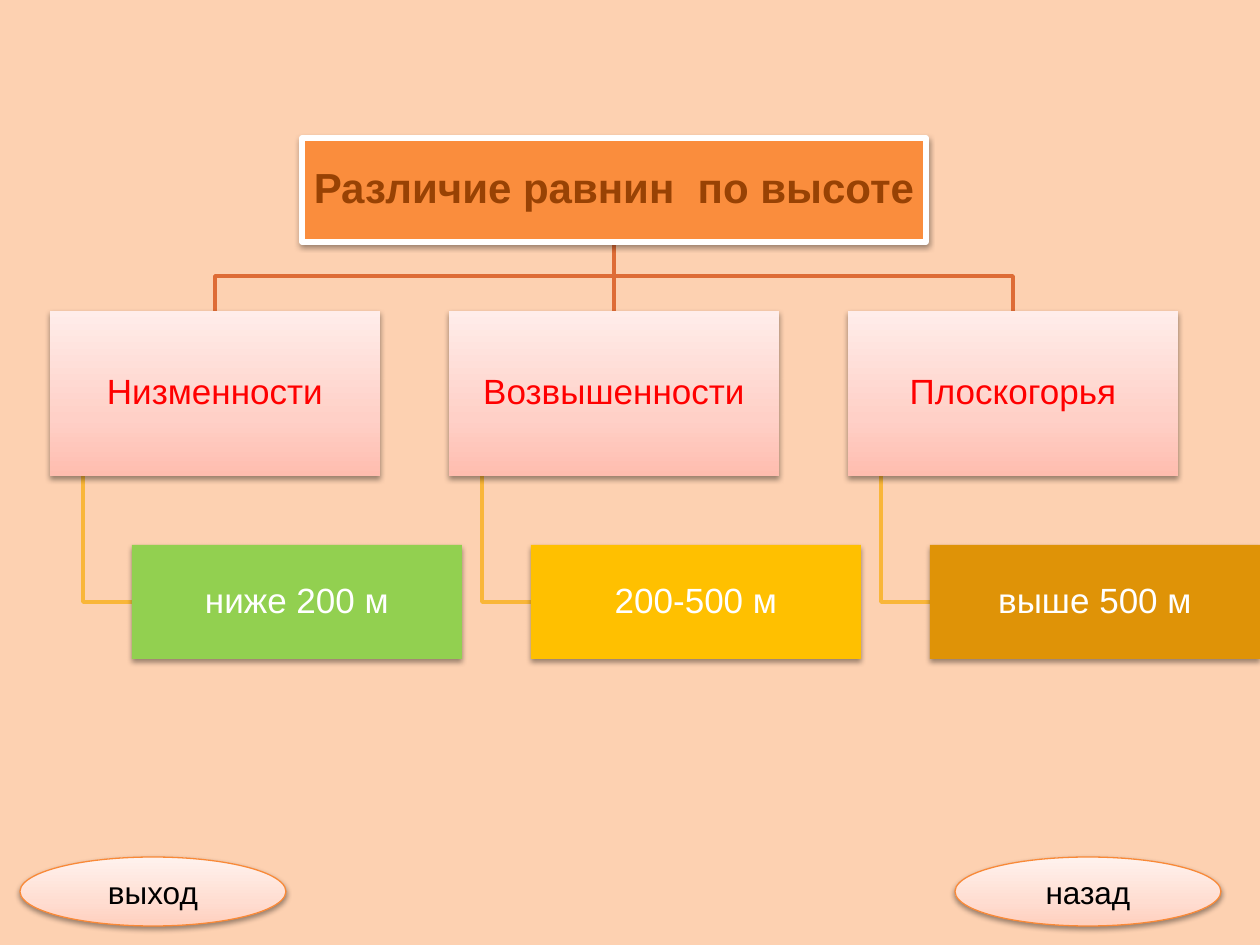
from copy import deepcopy
from dataclasses import dataclass
from typing import Optional, Union

from lxml import etree
from pptx import Presentation
from pptx import util as u
from pptx.dml.color import RGBColor
from pptx.enum import shapes, text
from pptx.oxml.ns import qn

EMU_PER_PX = u.Inches(1) / 126

PEACH = RGBColor(0xFD, 0xD1, 0xB1)
ORANGE = RGBColor(0xFA, 0x8D, 0x3D)
BROWN = RGBColor(0x98, 0x42, 0x04)
RUST = RGBColor(0xDE, 0x6C, 0x36)
AMBER = RGBColor(0xF9, 0xB6, 0x39)
RIM = RGBColor(0xF9, 0x89, 0x37)
GREEN = RGBColor(0x92, 0xD0, 0x50)
GOLD = RGBColor(0xFF, 0xC0, 0x00)
OCHRE = RGBColor(0xDF, 0x93, 0x07)
RED = RGBColor(0xFF, 0x00, 0x00)
WHITE = RGBColor(0xFF, 0xFF, 0xFF)
BLACK = RGBColor(0x00, 0x00, 0x00)
BRANCH_PINK = [(0, RGBColor(0xFF, 0xBD, 0xAF)), (0.35, RGBColor(0xFF, 0xD0, 0xC7)),
               (1, RGBColor(0xFF, 0xED, 0xEA))]
BUTTON_PINK = [(0, RGBColor(0xFF, 0xCF, 0xBD)), (0.35, RGBColor(0xFF, 0xDD, 0xD1)),
               (1, RGBColor(0xFF, 0xF2, 0xEE))]


@dataclass
class Style:
    fill: Union[RGBColor, list]
    font_color: RGBColor
    font_size: int
    bold: bool = False
    line: Optional[RGBColor] = None
    line_width: float = 0
    geometry: shapes.MSO_SHAPE = shapes.MSO_SHAPE.RECTANGLE
    inset: Optional[int] = 2
    line_spacing: float = 0.9


@dataclass
class Category:
    name: str
    height_range: str
    color: RGBColor


def px(value: float) -> int:
    return round(value * EMU_PER_PX)


def add_shadow(shape) -> None:
    shape.shadow.inherit = False
    effects = shape._element.spPr.find(qn("a:effectLst"))
    shadow = etree.SubElement(effects, qn("a:outerShdw"), blurRad="40000",
                              dist="20000", dir="5400000", rotWithShape="0")
    color = etree.SubElement(shadow, qn("a:srgbClr"), val="000000")
    etree.SubElement(color, qn("a:alpha"), val="38000")


def fill_gradient(shape, stops: list) -> None:
    shape.fill.gradient()
    shape.fill.gradient_angle = 90
    stop_list = shape._element.spPr.find(".//" + qn("a:gsLst"))
    stop_list.insert(1, deepcopy(stop_list[0]))
    for stop, (position, color) in zip(shape.fill.gradient_stops, stops):
        stop.position = position
        stop.color.rgb = color


def add_node(slide, label: str, left: int, top: int, width: int, height: int,
             style: Style):
    node = slide.shapes.add_shape(style.geometry, px(left), px(top), px(width), px(height))
    if isinstance(style.fill, list):
        fill_gradient(node, style.fill)
    else:
        node.fill.solid()
        node.fill.fore_color.rgb = style.fill
    if style.line is None:
        node.line.fill.background()
    else:
        node.line.color.rgb = style.line
        node.line.width = u.Pt(style.line_width)
    add_shadow(node)

    frame = node.text_frame
    frame.word_wrap = True
    frame.vertical_anchor = text.MSO_ANCHOR.MIDDLE
    if style.inset is not None:
        frame.margin_left = frame.margin_right = px(style.inset)
        frame.margin_top = frame.margin_bottom = px(style.inset)
    paragraph = frame.paragraphs[0]
    paragraph.alignment = text.PP_ALIGN.CENTER
    paragraph.line_spacing = style.line_spacing
    run = paragraph.add_run()
    run.text = label
    run.font.name = "Arial"
    run.font.size = u.Pt(style.font_size)
    run.font.bold = style.bold
    run.font.color.rgb = style.font_color
    return node


def finish_link(link, color: RGBColor) -> None:
    """Style a link and put it behind the boxes."""
    link.line.color.rgb = color
    link.line.width = u.Pt(2)
    link._element.getparent().insert(2, link._element)


def add_elbow(slide, points: list, color: RGBColor) -> None:
    (start_x, start_y), *rest = points
    builder = slide.shapes.build_freeform(start_x, start_y, scale=EMU_PER_PX)
    builder.add_line_segments(rest, close=False)
    elbow = builder.convert_to_shape()
    elbow.fill.background()
    elbow.shadow.inherit = False
    finish_link(elbow, color)


def add_straight(slide, upper, lower, color: RGBColor) -> None:
    link = slide.shapes.add_connector(shapes.MSO_CONNECTOR.STRAIGHT, 0, 0, 0, 0)
    link.begin_connect(upper, 2)
    link.end_connect(lower, 0)
    etree.SubElement(link._element.spPr, qn("a:effectLst"))
    finish_link(link, color)


TITLE = Style(ORANGE, BROWN, 24, bold=True, line=WHITE, line_width=3, inset=3)
BRANCH = Style(BRANCH_PINK, RED, 20)
BUTTON = Style(BUTTON_PINK, BLACK, 18, line=RIM, line_width=0.75,
               geometry=shapes.MSO_SHAPE.OVAL, inset=None, line_spacing=1.0)

CATEGORIES = [
    Category("Низменности", "ниже 200 м", GREEN),
    Category("Возвышенности", "200-500 м", GOLD),
    Category("Плоскогорья", "выше 500 м", OCHRE),
]

BOX_W, PITCH, FIRST_LEFT = 330, 399, 50
TITLE_W, TITLE_TOP, TITLE_H = 624, 138, 104
BRANCH_TOP, BRANCH_H = 311, 165
LEAF_TOP, LEAF_H, LEAF_INDENT, STEM_INDENT = 545, 114, 82, 33


def main() -> None:
    deck = Presentation()
    deck.slide_width, deck.slide_height = px(1260), px(945)
    slide = deck.slides.add_slide(deck.slide_layouts[6])
    slide.background.fill.solid()
    slide.background.fill.fore_color.rgb = PEACH

    # Title, centred over the middle branch
    center = FIRST_LEFT + PITCH + BOX_W // 2
    title_bottom = TITLE_TOP + TITLE_H
    title = add_node(slide, "Различие равнин  по высоте", center - TITLE_W // 2,
                     TITLE_TOP, TITLE_W, TITLE_H, TITLE)

    # Branches with their height ranges
    bar_y = (title_bottom + BRANCH_TOP) // 2
    for index, category in enumerate(CATEGORIES):
        left = FIRST_LEFT + index * PITCH
        branch_center = left + BOX_W // 2
        branch = add_node(slide, category.name, left, BRANCH_TOP, BOX_W, BRANCH_H, BRANCH)
        add_node(slide, category.height_range, left + LEAF_INDENT, LEAF_TOP,
                 BOX_W, LEAF_H, Style(category.color, WHITE, 20))
        if branch_center == center:
            add_straight(slide, title, branch, RUST)
        else:
            add_elbow(slide, [(center, title_bottom), (center, bar_y),
                              (branch_center, bar_y), (branch_center, BRANCH_TOP)], RUST)
        stem_x, leaf_y = left + STEM_INDENT, LEAF_TOP + LEAF_H // 2
        add_elbow(slide, [(stem_x, BRANCH_TOP + BRANCH_H), (stem_x, leaf_y),
                          (left + LEAF_INDENT, leaf_y)], AMBER)

    # Navigation buttons
    for label, left in (("выход", 20), ("назад", 955)):
        add_node(slide, label, left, 857, 266, 69, BUTTON)

    deck.save("out.pptx")


if __name__ == "__main__":
    main()
